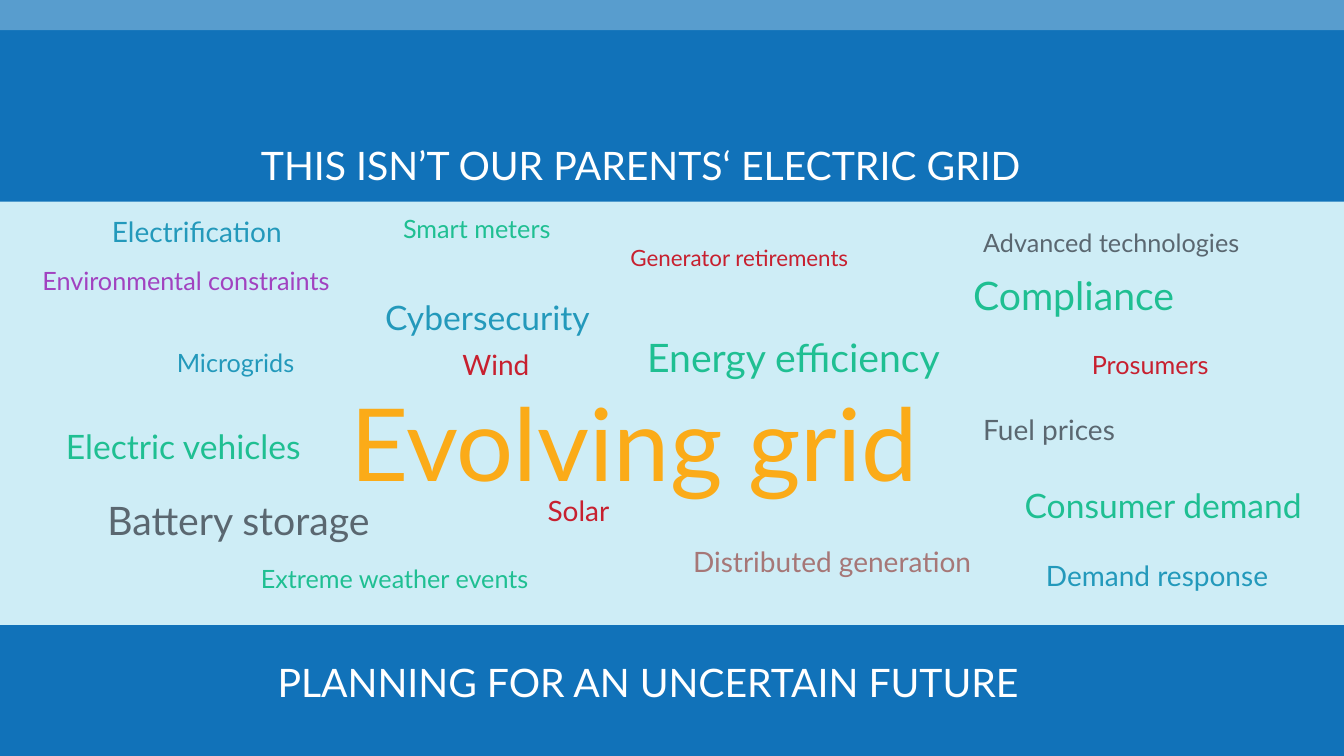
from pptx import Presentation
from pptx.dml.color import RGBColor
from pptx.enum.shapes import MSO_SHAPE as Shape
from pptx.enum.text import MSO_ANCHOR as Anchor, MSO_AUTO_SIZE as AutoSize, PP_ALIGN as Align
from pptx.util import Inches, Pt

COLUMNS, ROWS = 12, 15
BLUE, PALE, STRIP, WHITE = "1172B9", "CEEDF6", "589DCE", "FFFFFF"
GREEN, RED, TEAL, GREY = "1FBF92", "C7202F", "2399BB", "5A6770"
PURPLE, ROSE, AMBER = "A142C0", "A67777", "FBAB18"

# Word, column, row, width in columns, text size, colour
WORDS = [
    ("Electrification", 0.91, 4.16, 1.75, 20, TEAL),
    ("Smart meters", 3.51, 4.14, 1.57, 18, GREEN),
    ("Generator retirements", 5.54, 4.74, 2.21, 16, RED),
    ("Advanced technologies", 8.69, 4.42, 2.58, 18, GREY),
    ("Environmental constraints", 0.29, 5.16, 2.87, 18, PURPLE),
    ("Compliance", 8.6, 5.28, 2.07, 28, GREEN),
    ("Cybersecurity", 3.35, 5.8, 2.04, 24, TEAL),
    ("Energy efficiency", 5.69, 6.52, 2.9, 28, GREEN),
    ("Microgrids", 1.49, 6.8, 1.3, 18, TEAL),
    ("Wind", 4.04, 6.8, 0.79, 20, RED),
    ("Prosumers", 9.66, 6.84, 1.27, 18, RED),
    ("Evolving grid", 3.04, 7.46, 5.58, 72, AMBER),
    ("Fuel prices", 8.69, 8.08, 1.4, 20, GREY),
    ("Electric vehicles", 0.5, 8.36, 2.32, 24, GREEN),
    ("Consumer demand", 9.06, 9.52, 2.79, 24, GREEN),
    ("Solar", 4.8, 9.7, 0.77, 20, RED),
    ("Battery storage", 0.87, 9.74, 2.65, 28, GREY),
    ("Distributed generation", 6.1, 10.7, 2.78, 20, ROSE),
    ("Demand response", 9.25, 10.98, 2.25, 20, TEAL),
    ("Extreme weather events", 2.24, 11.08, 2.65, 18, GREEN),
]


def colour(value):
    return RGBColor.from_string(value)


class GridSlide:
    """The slide, its grid and its text style."""

    frame_format = {
        "word_wrap": False,
        "auto_size": AutoSize.SHAPE_TO_FIT_TEXT,
        "vertical_anchor": Anchor.TOP,
        "margin_left": Inches(0.1),
        "margin_right": Inches(0.1),
        "margin_top": Inches(0.05),
        "margin_bottom": Inches(0.05),
    }

    def __init__(self, presentation, background):
        self.column = presentation.slide_width / COLUMNS
        self.row = presentation.slide_height / ROWS
        self.slide = presentation.slides.add_slide(presentation.slide_layouts[5])
        fill = self.slide.background.fill
        fill.solid()
        fill.fore_color.rgb = colour(background)

    def band(self, top, height, fill):
        shape = self.slide.shapes.add_shape(
            Shape.RECTANGLE, 0, round(top * self.row),
            round(COLUMNS * self.column), round(height * self.row))
        shape.shadow.inherit = False
        shape.fill.solid()
        shape.fill.fore_color.rgb = colour(fill)
        shape.line.fill.background()

    def set_text(self, shape, text, left, top, width, size, text_colour):
        box = {
            "left": round(left * self.column),
            "top": round(top * self.row),
            "width": round(width * self.column),
            "height": Pt(size * 1.2) + Inches(0.1),
        }
        frame = shape.text_frame
        frame.text = text
        paragraph = frame.paragraphs[0]
        font_format = {"name": "Lato", "size": Pt(size), "bold": False}
        for target, values in ((shape, box), (frame, self.frame_format),
                               (paragraph, {"alignment": Align.LEFT}),
                               (paragraph.runs[0].font, font_format)):
            for name, value in values.items():
                setattr(target, name, value)
        paragraph.runs[0].font.color.rgb = colour(text_colour)

    def title(self, *details):
        self.set_text(self.slide.shapes.title, *details)

    def label(self, *details):
        self.set_text(self.slide.shapes.add_textbox(0, 0, 0, 0), *details)


def main():
    presentation = Presentation()
    presentation.slide_width = Inches(13.333)
    presentation.slide_height = Inches(7.5)
    page = GridSlide(presentation, BLUE)

    # Bands
    page.band(4, 8.4, PALE)
    page.band(0, 0.6, STRIP)

    # Headings above and below the word cloud
    page.title("THIS ISN’T OUR PARENTS‘ ELECTRIC GRID", 2.24, 2.7, 7.52, 28, WHITE)
    page.label("PLANNING FOR AN UNCERTAIN FUTURE", 2.39, 12.96, 7.25, 28, WHITE)

    # Word cloud
    for word in WORDS:
        page.label(*word)

    presentation.save("out.pptx")


if __name__ == "__main__":
    main()
